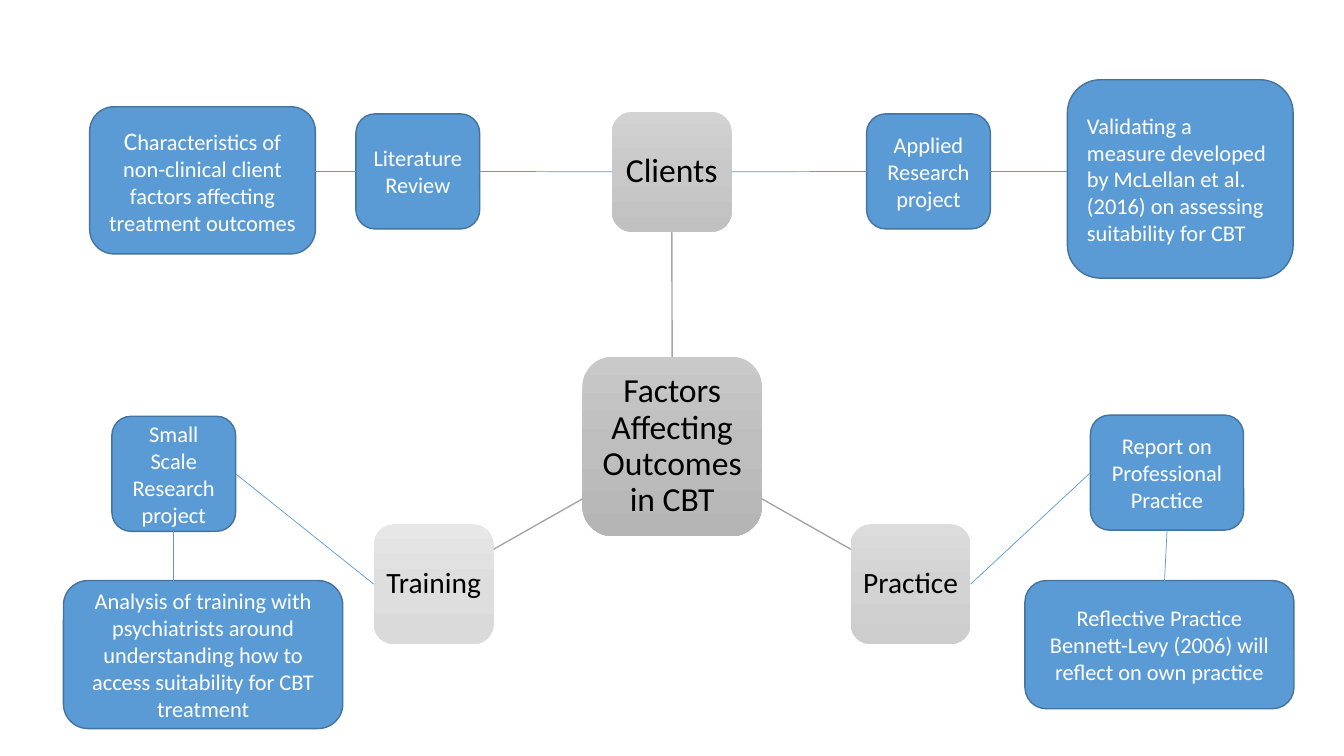
from copy import deepcopy

from pptx import Presentation
from pptx.dml.color import RGBColor
from pptx.enum.shapes import MSO_CONNECTOR, MSO_SHAPE
from pptx.enum.text import MSO_ANCHOR, PP_ALIGN
from pptx.oxml.ns import qn
from pptx.oxml.xmlchemy import OxmlElement
from pptx.util import Cm, Pt

ROUNDED = MSO_SHAPE.ROUNDED_RECTANGLE
STRAIGHT = MSO_CONNECTOR.STRAIGHT
MIDDLE = MSO_ANCHOR.MIDDLE
LEFT, CENTER = PP_ALIGN.LEFT, PP_ALIGN.CENTER
TOP_SIDE, LEFT_SIDE, BOTTOM_SIDE, RIGHT_SIDE = range(4)

THEME = {
    "font": "Calibri",
    "project": "5B9BD5", "project_edge": "43739E", "project_text": "FFFFFF",
    "factor_text": "000000", "spoke": "A6A6A6",
    "large": 24, "medium": 21, "initial": 18, "body": 16,
}


def add_box(place, runs, color, align, format_values):
    box = slide.shapes.add_shape(ROUNDED, *(Cm(length) for length in place))
    box.shadow.inherit = False
    frame = box.text_frame
    for attribute, setting in format_values.items():
        setattr(frame, attribute, setting)
    paragraph = frame.paragraphs[0]
    paragraph.alignment = align
    for wording, size in runs:
        run = paragraph.add_run()
        run.text = wording
        run.font.name = THEME["font"]
        run.font.size = Pt(THEME[size])
        run.font.color.rgb = RGBColor.from_string(THEME[color])
    return box


deck = Presentation()
deck.slide_width, deck.slide_height = Cm(33.87), Cm(19.05)
slide = deck.slides.add_slide(deck.slide_layouts[6])
boxes = {}

factors = [
    ("center", "Factors Affecting Outcomes in CBT", 14.68, 8.99, 4.52, "large", 0.18,
     ("C9C9C9", "BEBEBE", "B5B5B5")),
    ("clients", "Clients", 15.42, 2.82, 3.02, "large", 0.18,
     ("D2D2D2", "C8C8C8", "C1C1C1")),
    ("practice", "Practice", 21.44, 13.21, 3.02, "medium", 0.15,
     ("DCDCDC", "D3D3D3", "CDCDCD")),
    ("training", "Training", 9.42, 13.21, 3.02, "medium", 0.15,
     ("E7E7E7", "DEDEDE", "DADADA")),
]
for key, wording, left, top, side, size, inset, shades in factors:
    margins = {f"margin_{edge}": Cm(inset) for edge in ("left", "right", "top", "bottom")}
    factor = add_box((left, top, side, side), [(wording, size)], "factor_text", CENTER,
                     {"word_wrap": True, "vertical_anchor": MIDDLE, **margins})
    factor.text_frame.paragraphs[0].line_spacing = 0.9
    factor.line.fill.background()
    factor.fill.gradient()
    factor.fill.gradient_angle = 270
    stop_list = factor._element.spPr.find(".//" + qn("a:gsLst"))
    stop_list.insert(1, deepcopy(stop_list[0]))
    for step, (stop, shade) in enumerate(zip(factor.fill.gradient_stops, shades)):
        stop.position = step / 2
        stop.color.rgb = RGBColor.from_string(shade)
    boxes[key] = factor

projects = [
    ("literature", (8.97, 2.87, 3.12, 2.9), CENTER, [("Literature Review", "body")]),
    ("applied", (21.84, 2.87, 3.12, 2.9), CENTER, [("Applied Research project", "body")]),
    ("small", (2.82, 10.49, 3.12, 2.9), CENTER, [("Small Scale Research project", "body")]),
    ("report", (27.48, 10.46, 3.86, 2.9), CENTER,
     [("Report on Professional Practice", "body")]),
    ("characteristics", (2.26, 2.69, 5.69, 3.71), CENTER,
     [("C", "initial"),
      ("haracteristics of non-clinical client factors affecting treatment outcomes", "body")]),
    ("validating", (26.9, 2.01, 5.69, 5), LEFT,
     [("Validating a measure developed by McLellan et al. (2016) on assessing "
       "suitability for CBT", "body")]),
    ("reflective", (25.83, 14.63, 6.78, 3.23), CENTER,
     [("Reflective Practice Bennett-Levy (2006) will reflect on own practice", "body")]),
    ("analysis", (1.6, 14.63, 7.04, 3.73), CENTER,
     [("Analysis of training with psychiatrists around understanding how to access "
       "suitability for CBT treatment", "body")]),
]
for key, place, align, runs in projects:
    project = add_box(place, runs, "project_text", align,
                      {"word_wrap": True, "vertical_anchor": MIDDLE})
    project.fill.solid()
    project.fill.fore_color.rgb = RGBColor.from_string(THEME["project"])
    project.line.color.rgb = RGBColor.from_string(THEME["project_edge"])
    project.line.width = Pt(1)
    boxes[key] = project

links = [
    ("spoke", 1, ("center", TOP_SIDE), ("clients", BOTTOM_SIDE)),
    ("spoke", 1, (19.2, 12.57), (21.44, 13.84)),
    ("spoke", 1, (14.68, 12.57), (12.44, 13.84)),
    ("project", 0.5, ("small", RIGHT_SIDE), ("training", LEFT_SIDE)),
    ("project", 0.5, ("literature", RIGHT_SIDE), ("clients", LEFT_SIDE)),
    ("project", 0.5, ("applied", LEFT_SIDE), ("clients", RIGHT_SIDE)),
    ("project", 0.5, ("practice", RIGHT_SIDE), ("report", LEFT_SIDE)),
    ("project", 0.5, ("small", BOTTOM_SIDE), (4.38, 14.63)),
    ("project", 0.5, ("report", BOTTOM_SIDE), (29.34, 14.78)),
    ("project", 0.5, ("literature", LEFT_SIDE), (7.95, 4.32)),
    ("project", 0.5, ("applied", RIGHT_SIDE), (26.9, 4.32)),
]
for color, width, start, end in links:
    points = [(0, 0) if point[0] in boxes else point for point in (start, end)]
    link = slide.shapes.add_connector(STRAIGHT, *(Cm(n) for point in points for n in point))
    for connect, (key, side) in ((link.begin_connect, start), (link.end_connect, end)):
        if key in boxes:
            connect(boxes[key], side)
    link.line.color.rgb = RGBColor.from_string(THEME[color])
    link.line.width = Pt(width)
    link._element.spPr.append(OxmlElement("a:effectLst"))

deck.save("out.pptx")
